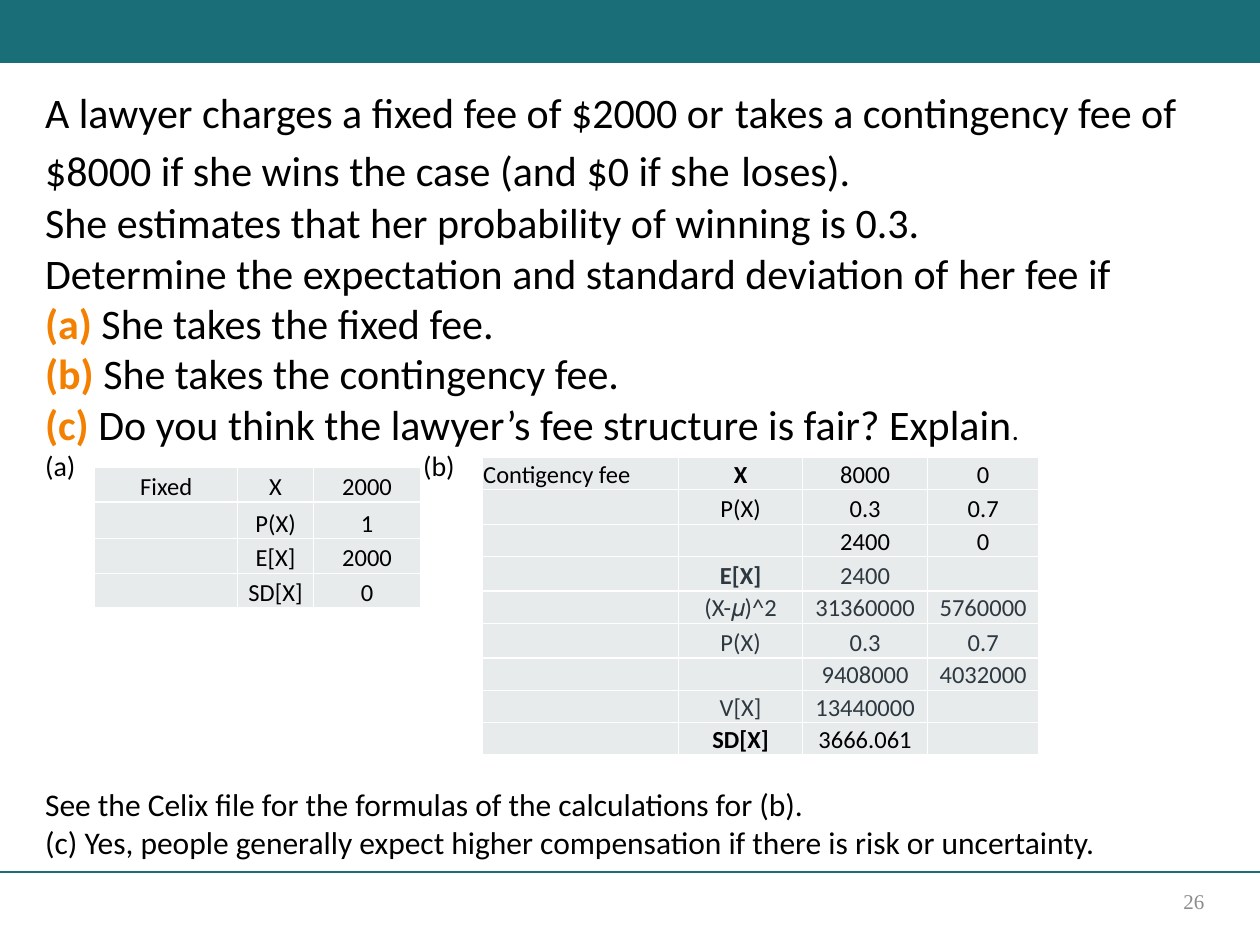
import lxml.etree
import pptx
import pptx.dml.color
import pptx.enum.shapes
import pptx.enum.text
import pptx.oxml.ns
import pptx.util

Cm = pptx.util.Cm
Pt = pptx.util.Pt
qn = pptx.oxml.ns.qn
ALIGN = pptx.enum.text.PP_ALIGN
ANCHOR = pptx.enum.text.MSO_ANCHOR
TEAL, ORANGE, BLACK, SLATE = "196E78", "F38000", "000000", "2D3840"


def color(value):
    return pptx.dml.color.RGBColor.from_string(value)


def style(run, size, value=BLACK, bold=False, name="Calibri"):
    run.font.name = name
    run.font.size = Pt(size)
    run.font.bold = bold
    run.font.color.rgb = color(value)


presentation = pptx.Presentation()
presentation.slide_width = Cm(25.4)
presentation.slide_height = Cm(19.05)
slide = presentation.slides.add_slide(presentation.slide_layouts[6])

banner = slide.shapes.add_shape(
    pptx.enum.shapes.MSO_SHAPE.RECTANGLE, 0, 0, Cm(25.4), Cm(1.27))
banner.shadow.inherit = False
banner.fill.solid()
banner.fill.fore_color.rgb = color(TEAL)
banner.line.fill.background()

footer_line = slide.shapes.add_connector(
    pptx.enum.shapes.MSO_CONNECTOR.STRAIGHT, 0, Cm(17.58), Cm(25.4), Cm(17.58))
footer_line.line.color.rgb = color(TEAL)
footer_line.line.width = Pt(1)
lxml.etree.SubElement(footer_line._element.spPr, qn("a:effectLst"))

question = [
    [("A lawyer charges a fixed fee of $2000 or", 24), (" ", 28),
     ("takes a contingency fee of $8000 if she wins the case (and $0 if she", 24),
     (" ", 28), ("loses).", 24)],
    [("She estimates that her probability of winning is 0.3.", 24)],
    [("Determine the expectation and standard deviation of her fee if", 24)],
    [("(a) ", 24, ORANGE, True), ("She takes the fixed fee.", 24)],
    [("(b) ", 24, ORANGE, True), ("She takes the contingency fee.", 24)],
    [("(c) ", 24, ORANGE, True),
     ("Do you think the lawyer’s fee structure is fair? Explain", 24), (".", 16)],
    [("(a)\t\t\t(b)", 16)],
    [("See the Celix file for the formulas of the calculations for (b).", 18)],
    [("(c) Yes, people generally expect higher compensation if there is risk "
      "or uncertainty.", 18)],
]
text_frame = slide.shapes.add_textbox(
    Cm(0.66), Cm(1.47), Cm(24.08), Cm(16.15)).text_frame
text_frame.word_wrap = True
for index, parts in enumerate(question):
    paragraph = text_frame.paragraphs[0] if index == 0 else text_frame.add_paragraph()
    for text, *look in parts:
        run = paragraph.add_run()
        run.text = text
        style(run, *look)
label_paragraph, answer_paragraph = text_frame.paragraphs[6:8]
answer_paragraph.space_before = Pt(173)
tab_list = lxml.etree.SubElement(
    label_paragraph._p.get_or_add_pPr(), qn("a:tabLst"))
for stop in range(1, 4):
    lxml.etree.SubElement(
        tab_list, qn("a:tab"), pos=str(Cm(2.54 * stop)), algn="l")

tables = [
    (1.91, 9.42, [2.88, 1.53, 2.16], [0.7, 0.74, 0.7, 0.7], [
        ["Fixed", "X", "2000"],
        ["", "P(X)", "1"],
        ["", "E[X]", "2000"],
        ["", "SD[X]", "0"],
    ]),
    (9.72, 9.22, [3.96, 2.5, 2.52, 2.24],
     [0.65, 0.7, 0.65, 0.7, 0.65, 0.7, 0.65, 0.65, 0.65], [
        ["Contigency fee", "X", "8000", "0"],
        ["", "P(X)", "0.3", "0.7"],
        ["", "", "2400", "0"],
        ["", "E[X]", "2400", ""],
        ["", "(X-𝜇)^2", "31360000", "5760000"],
        ["", "P(X)", "0.3", "0.7"],
        ["", "", "9408000", "4032000"],
        ["", "V[X]", "13440000", ""],
        ["", "SD[X]", "3666.061", ""],
    ]),
]
bold_cells = {(0, 1), (3, 1), (8, 1)}
for left, top, widths, heights, rows in tables:
    contingency = len(widths) == 4
    table = slide.shapes.add_table(
        len(heights), len(widths), Cm(left), Cm(top),
        Cm(sum(widths)), Cm(sum(heights))).table
    table.first_row = False
    table.horz_banding = False
    for column, width in zip(table.columns, widths):
        column.width = Cm(width)
    for row, height in zip(table.rows, heights):
        row.height = Cm(height)
    for row_index, values in enumerate(rows):
        for column_index, value in enumerate(values):
            cell = table.cell(row_index, column_index)
            cell.margin_left = cell.margin_right = cell.margin_top = Cm(0.02)
            cell.margin_bottom = 0
            cell.vertical_anchor = ANCHOR.BOTTOM
            paragraph = cell.text_frame.paragraphs[0]
            if value:
                paragraph.text = value
                if value != "Contigency fee":
                    paragraph.alignment = ALIGN.CENTER
                style(paragraph.runs[0], 14,
                      SLATE if contingency and 3 <= row_index <= 7 else BLACK,
                      contingency and (row_index, column_index) in bold_cells)
            else:
                lxml.etree.SubElement(paragraph._p, qn("a:endParaRPr"), sz="1400")
            properties = cell._tc.get_or_add_tcPr()
            for side in ("a:lnL", "a:lnR", "a:lnT", "a:lnB"):
                border = lxml.etree.SubElement(properties, qn(side), w="12700")
                fill = lxml.etree.SubElement(border, qn("a:solidFill"))
                lxml.etree.SubElement(fill, qn("a:srgbClr"), val="FFFFFF")
            cell.fill.solid()
            cell.fill.fore_color.rgb = color("E8EBEC")

text_frame = slide.shapes.add_textbox(
    Cm(17.93), Cm(17.65), Cm(6.6), Cm(1.02)).text_frame
text_frame.word_wrap = True
text_frame.vertical_anchor = ANCHOR.MIDDLE
text_frame.text = "26"
text_frame.paragraphs[0].alignment = ALIGN.RIGHT
style(text_frame.paragraphs[0].runs[0], 12, "8C8C8C", name="Times New Roman")

presentation.save("out.pptx")
